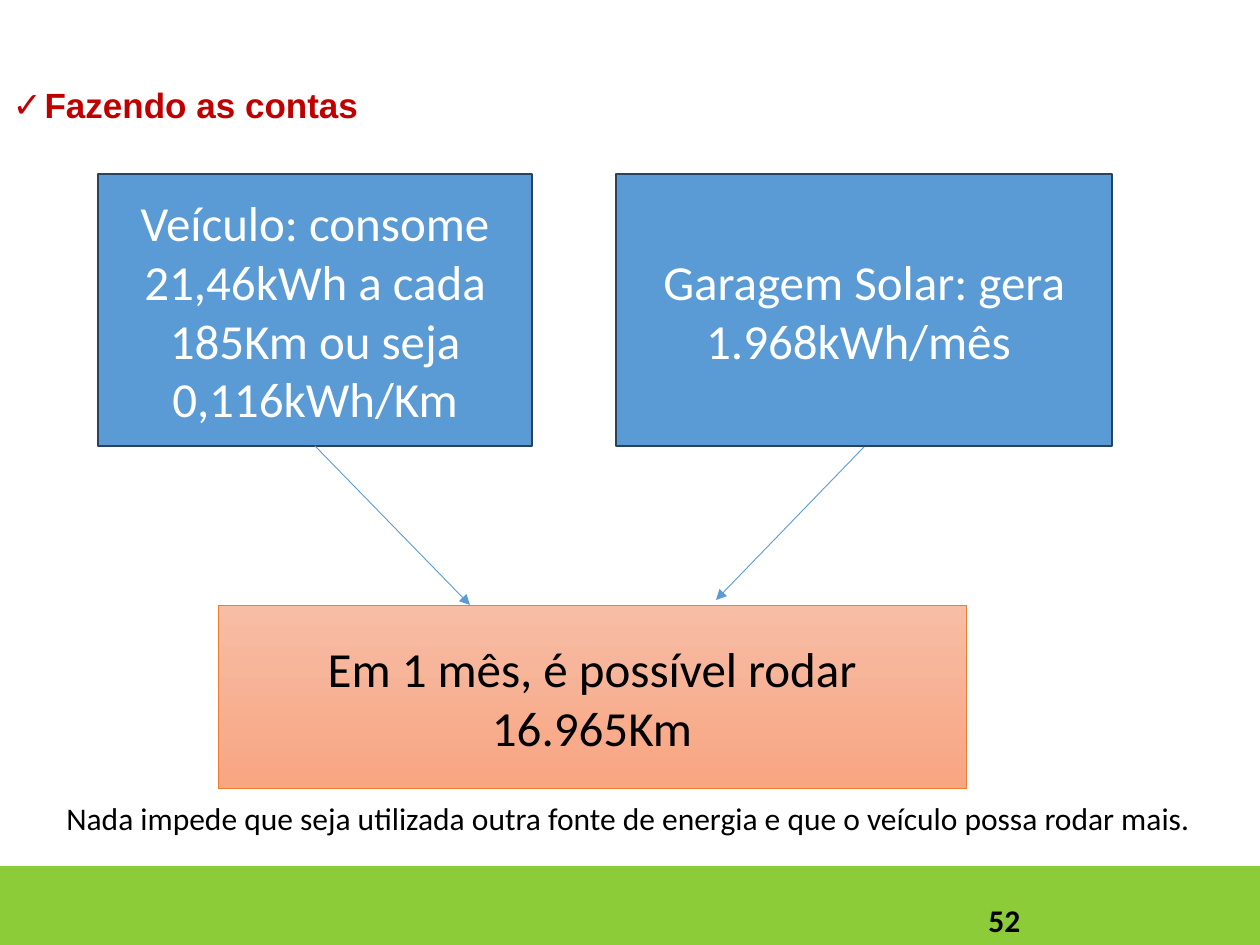
from lxml.etree import SubElement as Sub
from pptx import Presentation
from pptx.dml.color import RGBColor
from pptx.enum.shapes import MSO_CONNECTOR as Conn, MSO_SHAPE as Shape
from pptx.enum.text import MSO_ANCHOR as Anchor, MSO_AUTO_SIZE as Auto, PP_ALIGN as Align
from pptx.oxml.ns import qn
from pptx.util import Pt

PX = 914400 / 126


def px(*nums):
    return [round(n * PX) for n in nums]


def write(frame, text, size, color, bold=False, font="Calibri"):
    frame.word_wrap = True
    run = frame.paragraphs[0].add_run()
    run.text = text
    run.font.name = font
    run.font.size = Pt(size)
    run.font.bold = bold
    run.font.color.rgb = RGBColor.from_string(color)


deck = Presentation()
deck.slide_width, deck.slide_height = px(1260, 945)
slide = deck.slides.add_slide(deck.slide_layouts[1])
shapes = slide.shapes
title = shapes.title.element
title.getparent().remove(title)

body = slide.placeholders[1]
body.left, body.top, body.width, body.height = px(0, 82, 1186, 786)
frame = body.text_frame
frame.auto_size = Auto.NONE
para = frame.paragraphs[0]
para.alignment = Align.JUSTIFY
para.line_spacing = 0.9
para.space_before = Pt(0)
props = para._p.get_or_add_pPr()
indent = px(32)[0]
props.set("marL", str(indent))
props.set("indent", str(-indent))
Sub(props, qn("a:buFont")).set("typeface", "Arial")
Sub(props, qn("a:buChar")).set("char", "✓")
write(frame, "Fazendo as contas", 20, "C00000", True, "Arial")

boxes = [
    ((0, 867, 1260, 78), "8BCC38", "8BCC38", 1, "", ""),
    ((616, 174, 496, 272), "5B9BD5", "28445D", 1, "FFFFFF",
     "Garagem Solar: gera 1.968kWh/mês "),
    ((98, 174, 434, 272), "5B9BD5", "28445D", 1, "FFFFFF",
     "Veículo: consome 21,46kWh a cada 185Km ou seja 0,116kWh/Km"),
    ((218, 605, 748, 184), "", "ED7D31", 0.5, "000000",
     "Em 1 mês, é possível rodar 16.965Km"),
]
for place, fill, edge, width, color, text in boxes:
    box = shapes.add_shape(Shape.RECTANGLE, *px(*place))
    box.shadow.inherit = False
    box.line.color.rgb = RGBColor.from_string(edge)
    box.line.width = Pt(width)
    if fill:
        box.fill.solid()
        box.fill.fore_color.rgb = RGBColor.from_string(fill)
    else:
        box.fill.gradient()
        box.fill.gradient_angle = 270
        for stop, shade in zip(box.fill.gradient_stops, ("F7BDA5", "F8A582")):
            stop.color.rgb = RGBColor.from_string(shade)
    if text:
        frame = box.text_frame
        frame.vertical_anchor = Anchor.MIDDLE
        frame.paragraphs[0].alignment = Align.CENTER
        write(frame, text, 28, color)

for ends in ((315, 446, 470, 605), (864, 447, 716, 600)):
    arrow = shapes.add_connector(Conn.STRAIGHT, *px(*ends))
    arrow.line.color.rgb = RGBColor.from_string("5B9BD5")
    arrow.line.width = Pt(0.5)
    Sub(arrow.line._get_or_add_ln(), qn("a:tailEnd")).set("type", "triangle")
    Sub(arrow._element.spPr, qn("a:effectLst"))

note = "Nada impede que seja utilizada outra fonte de energia e que o veículo possa rodar mais."
for place, text, bold in (
    ((976, 895, 284, 50), "52", True),
    ((54, 793, 1160, 50), note, False),
):
    label = shapes.add_textbox(*px(*place))
    write(label.text_frame, text, 18, "000000", bold)

deck.save("out.pptx")
